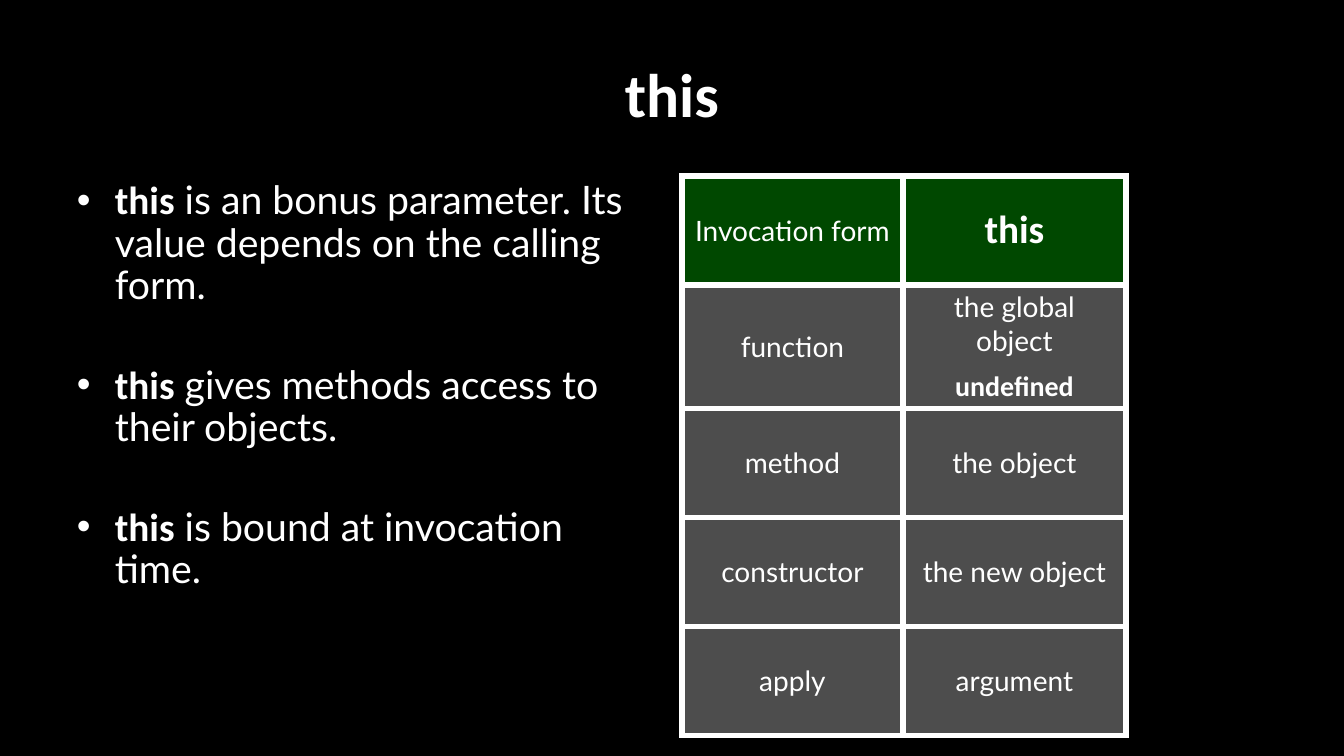
import pptx
import pptx.dml.color
import pptx.enum.text
import pptx.oxml
import pptx.oxml.ns
import pptx.util

PX = 914400 / 100.8
COLORS = {
    "background": "000000",
    "text": "FFFFFF",
    "header": "004800",
    "cell": "4D4D4D",
    "border": "FFFFFF",
}
KEYWORD_FONT = "Calibri"
TEXT_FONT = "Lato"
KEYWORDS = ("this", "undefined")

BULLETS = [
    ["this", " is an bonus parameter. Its value depends on the calling form."],
    ["this", " gives methods access to their objects."],
    ["this", " is bound at invocation time."],
]
INVOCATIONS = [
    ("Invocation form", "this"),
    ("function", "the global object\nundefined"),
    ("method", "the object"),
    ("constructor", "the new object"),
    ("apply", "argument"),
]


def px(length):
    return pptx.util.Emu(round(length * PX))


def color(name):
    return pptx.dml.color.RGBColor.from_string(COLORS[name])


def format_run(run, size):
    keyword = run.text in KEYWORDS
    run.font.name = KEYWORD_FONT if keyword else TEXT_FONT
    run.font.bold = keyword
    run.font.size = pptx.util.Pt(size)
    run.font.color.rgb = color("text")


def add_title(slide, text, left, top, width, height):
    title = slide.shapes.title
    title.left, title.top, title.width, title.height = map(px, (left, top, width, height))
    title.text_frame.text = text
    title.text_frame.vertical_anchor = pptx.enum.text.MSO_ANCHOR.MIDDLE
    paragraph = title.text_frame.paragraphs[0]
    paragraph.alignment = pptx.enum.text.PP_ALIGN.CENTER
    format_run(paragraph.runs[0], 44)


def set_bullet(paragraph, indent):
    properties = paragraph._p.get_or_add_pPr()
    properties.set("marL", str(px(indent)))
    properties.set("indent", str(-px(indent)))
    namespace = pptx.oxml.ns.nsdecls("a")
    for xml in (f'<a:buFont {namespace} typeface="Arial"/>',
                f'<a:buChar {namespace} char="•"/>'):
        properties.append(pptx.oxml.parse_xml(xml))


def add_bullets(slide, items, left, top, width, height):
    shape = slide.shapes.add_textbox(*map(px, (left, top, width, height)))
    text_frame = shape.text_frame
    text_frame.word_wrap = True
    for index, pieces in enumerate(items):
        paragraph = text_frame.add_paragraph() if index else text_frame.paragraphs[0]
        paragraph.line_spacing = 0.9
        paragraph.space_before = pptx.util.Pt(41 if index else 6)
        set_bullet(paragraph, 38)
        for piece in pieces:
            run = paragraph.add_run()
            run.text = piece
            format_run(run, 28)


def set_borders(cell, width):
    properties = cell._tc.get_or_add_tcPr()
    for index, side in enumerate("LRTB"):
        properties.insert(index, pptx.oxml.parse_xml(
            f'<a:ln{side} {pptx.oxml.ns.nsdecls("a")} w="{pptx.util.Pt(width)}">'
            f'<a:solidFill><a:srgbClr val="{COLORS["border"]}"/></a:solidFill>'
            f'</a:ln{side}>'))


def fill_cell(cell, text, size, fill):
    cell.text_frame.text = text
    cell.vertical_anchor = pptx.enum.text.MSO_ANCHOR.MIDDLE
    cell.fill.solid()
    cell.fill.fore_color.rgb = color(fill)
    set_borders(cell, 4.5)
    for paragraph in cell.text_frame.paragraphs:
        paragraph.alignment = pptx.enum.text.PP_ALIGN.CENTER
        paragraph.space_before = pptx.util.Pt(5)
        paragraph.space_after = pptx.util.Pt(4)
        for run in paragraph.runs:
            format_run(run, size)


def add_invocation_table(slide, rows, left, top, column_widths, row_height):
    frame = slide.shapes.add_table(
        len(rows), len(column_widths), px(left), px(top),
        px(sum(column_widths)), px(row_height * len(rows)))
    table = frame.table
    table.horz_banding = False
    for column, width in zip(table.columns, column_widths):
        column.width = px(width)
    for row_index, texts in enumerate(rows):
        table.rows[row_index].height = px(row_height)
        for column_index, text in enumerate(texts):
            fill_cell(table.cell(row_index, column_index), text,
                      28 if text == "this" else 20,
                      "cell" if row_index else "header")


def main():
    presentation = pptx.Presentation()
    presentation.slide_width = px(1344)
    presentation.slide_height = px(756)

    # Black slide with its title
    slide = presentation.slides.add_slide(presentation.slide_layouts[5])
    slide.background.fill.solid()
    slide.background.fill.fore_color.rgb = color("background")
    add_title(slide, "this", 67, 30, 1210, 126)

    # Explanation on the left, invocation forms on the right
    add_bullets(slide, BULLETS, 67, 176, 594, 562)
    add_invocation_table(slide, INVOCATIONS, 682, 176, (221, 223), 109)

    presentation.save("out.pptx")


if __name__ == "__main__":
    main()
